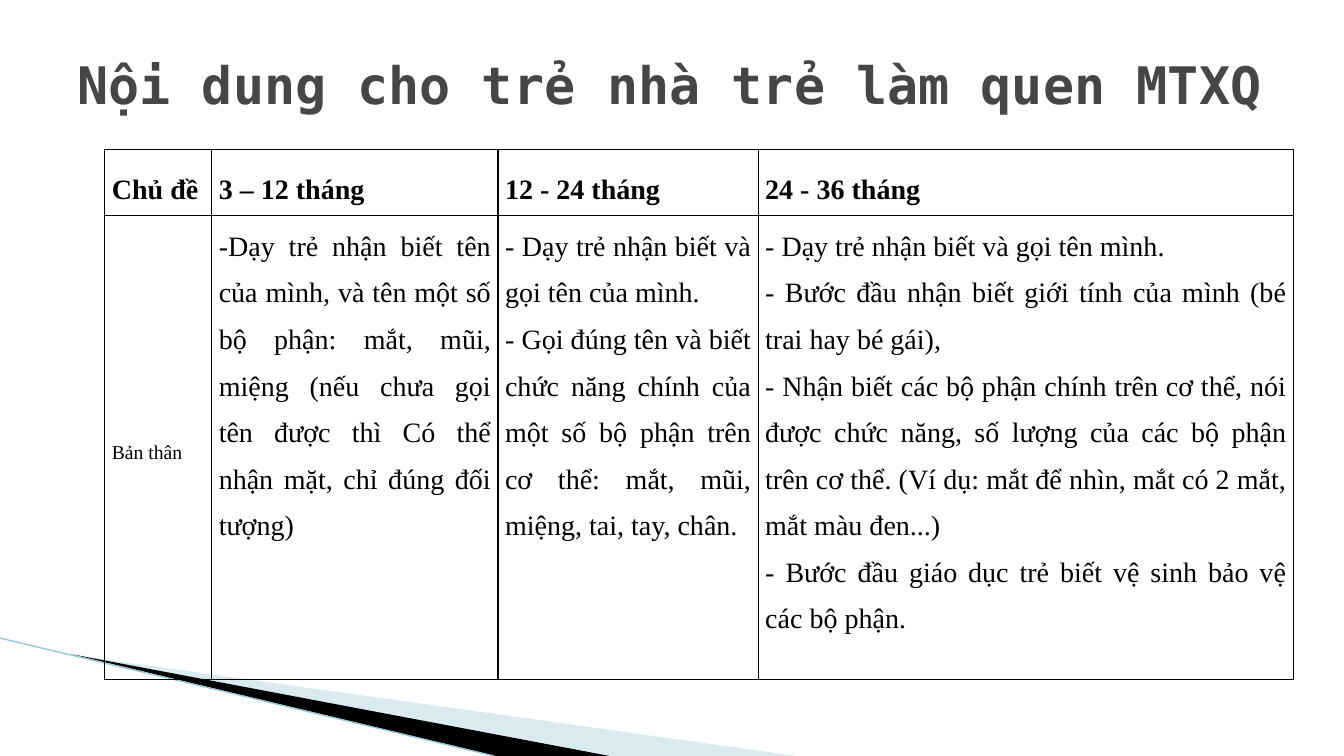
"""Builds a slide on what toddlers learn about themselves, by age group."""
import dataclasses
import typing

import lxml.etree
import pptx
import pptx.dml.color
import pptx.enum.shapes
import pptx.enum.text
import pptx.oxml
import pptx.oxml.ns
import pptx.util

Inches = pptx.util.Inches
Pt = pptx.util.Pt
RGB = pptx.dml.color.RGBColor
ALIGN = pptx.enum.text.PP_ALIGN
ANCHOR = pptx.enum.text.MSO_ANCHOR
qn = pptx.oxml.ns.qn


@dataclasses.dataclass(frozen=True)
class Theme:
    title_font: str = "DejaVu Sans Mono"
    body_font: str = "Times New Roman"
    title_size: float = 36.9
    body_size: float = 20
    topic_size: float = 14
    title_color: str = "464646"
    ink: str = "000000"
    pale: str = "A0CBDC"
    edge: str = "97C5D8"


@dataclasses.dataclass(frozen=True)
class Wedge:
    points: tuple[tuple[float, float], ...]
    color: str
    opacity: int = 100


@dataclasses.dataclass(frozen=True)
class CellText:
    lines: tuple[str, ...]
    size: float
    bold: bool = False
    anchor: typing.Any = ANCHOR.MIDDLE


THEME = Theme()
WEDGES = (
    Wedge(((0.73, 6.5), (7.9, 7.5), (6.08, 7.5)), THEME.pale, 40),
    Wedge(((0.71, 6.49), (6.05, 7.5), (4.92, 7.5)), THEME.ink),
)
COL_WIDTHS = (1.06, 2.84, 2.58, 5.31)
ROW_HEIGHTS = (0.66, 4.6)
HEADINGS = ("Chủ đề", "3 – 12 tháng", "12 - 24 tháng", "24 - 36 tháng")
CONTENTS = (
    (
        "-Dạy trẻ nhận biết tên của mình, và tên một số bộ phận: mắt, mũi, miệng "
        "(nếu chưa gọi tên được thì Có thể nhận mặt, chỉ đúng đối tượng)",
    ),
    (
        "- Dạy trẻ nhận biết và gọi tên của mình.",
        "- Gọi đúng tên và biết chức năng chính của một số bộ phận trên cơ thể: "
        "mắt, mũi, miệng, tai, tay, chân.",
    ),
    (
        "- Dạy trẻ nhận biết và gọi tên mình.",
        "- Bước đầu nhận biết giới tính của mình (bé trai hay bé gái),",
        "- Nhận biết các bộ phận chính trên cơ thể, nói được chức năng, số lượng "
        "của các bộ phận trên cơ thể. (Ví dụ: mắt để nhìn, mắt có 2 mắt, "
        "mắt màu đen...)",
        "- Bước đầu giáo dục trẻ biết vệ sinh bảo vệ các bộ phận.",
    ),
)
ROWS = (
    tuple(CellText((h,), THEME.body_size, bold=True) for h in HEADINGS),
    (
        CellText(("Bản thân",), THEME.topic_size),
        *(CellText(c, THEME.body_size, anchor=ANCHOR.TOP) for c in CONTENTS),
    ),
)


def write(tf, lines: typing.Sequence[str], *, font: str, size: float, color: str,
          bold: bool = False, align=ALIGN.LEFT, spacing: float = 1.0) -> None:
    for i, line in enumerate(lines):
        p = tf.paragraphs[0] if i == 0 else tf.add_paragraph()
        p.alignment = align
        p.line_spacing = spacing
        r = p.add_run()
        r.text = line
        r.font.name = font
        r.font.size = Pt(size)
        r.font.bold = bold
        r.font.color.rgb = RGB.from_string(color)


def draw_wedge(s, wedge: Wedge) -> None:
    start, *rest = [(Inches(x), Inches(y)) for x, y in wedge.points]
    builder = s.shapes.build_freeform(*start)
    builder.add_line_segments(rest, close=True)
    sp = builder.convert_to_shape()
    sp.shadow.inherit = False
    sp.line.fill.background()
    sp.fill.solid()
    sp.fill.fore_color.rgb = RGB.from_string(wedge.color)
    if wedge.opacity < 100:
        clr = sp.fill._xPr.find(qn("a:solidFill"))[0]
        alpha = lxml.etree.SubElement(clr, qn("a:alpha"))
        alpha.set("val", str(wedge.opacity * 1000))


def draw_edge(s) -> None:
    sp = s.shapes.add_connector(
        pptx.enum.shapes.MSO_CONNECTOR.STRAIGHT,
        Inches(0), Inches(6.33), Inches(4.9), Inches(7.5))
    sp.line.color.rgb = RGB.from_string(THEME.edge)
    sp.line.width = Pt(0.95)
    lxml.etree.SubElement(sp._element.spPr, qn("a:effectLst"))


def add_borders(cell, color: str) -> None:
    tc_pr = cell._tc.get_or_add_tcPr()
    for side in ("lnL", "lnR", "lnT", "lnB"):
        ln = lxml.etree.SubElement(tc_pr, qn(f"a:{side}"), w=str(Pt(1)))
        fill = lxml.etree.SubElement(ln, qn("a:solidFill"))
        lxml.etree.SubElement(fill, qn("a:srgbClr"), val=color)


def fill_cell(cell, content: CellText) -> None:
    add_borders(cell, THEME.ink)
    cell.fill.background()
    cell.margin_left = cell.margin_right = Inches(0.07)
    cell.margin_top = cell.margin_bottom = 0
    cell.vertical_anchor = content.anchor
    write(cell.text_frame, content.lines, font=THEME.body_font, size=content.size,
          color=THEME.ink, bold=content.bold, align=ALIGN.JUSTIFY, spacing=1.5)


def draw_table(s) -> None:
    table = s.shapes.add_table(
        len(ROWS), len(COL_WIDTHS), Inches(1.04), Inches(1.48),
        Inches(sum(COL_WIDTHS)), Inches(sum(ROW_HEIGHTS))).table
    table.first_row = table.horz_banding = False
    for col, width in zip(table.columns, COL_WIDTHS):
        col.width = Inches(width)
    for row, height, contents in zip(table.rows, ROW_HEIGHTS, ROWS):
        row.height = Inches(height)
        for cell, content in zip(row.cells, contents):
            fill_cell(cell, content)


def draw_title(s) -> None:
    sp = s.shapes.add_textbox(Inches(0.67), Inches(0.4), Inches(12), Inches(0.86))
    tf = sp.text_frame
    tf.word_wrap = True
    tf.vertical_anchor = ANCHOR.MIDDLE
    write(tf, ("Nội dung cho trẻ nhà trẻ làm quen MTXQ",), font=THEME.title_font,
          size=THEME.title_size, color=THEME.title_color, bold=True)


def main() -> None:
    prs = pptx.Presentation()
    prs.slide_width, prs.slide_height = Inches(13.33), Inches(7.5)
    s = prs.slides.add_slide(prs.slide_layouts[6])
    for wedge in WEDGES:
        draw_wedge(s, wedge)
    draw_edge(s)
    draw_table(s)
    draw_title(s)
    prs.save("out.pptx")


if __name__ == "__main__":
    main()
